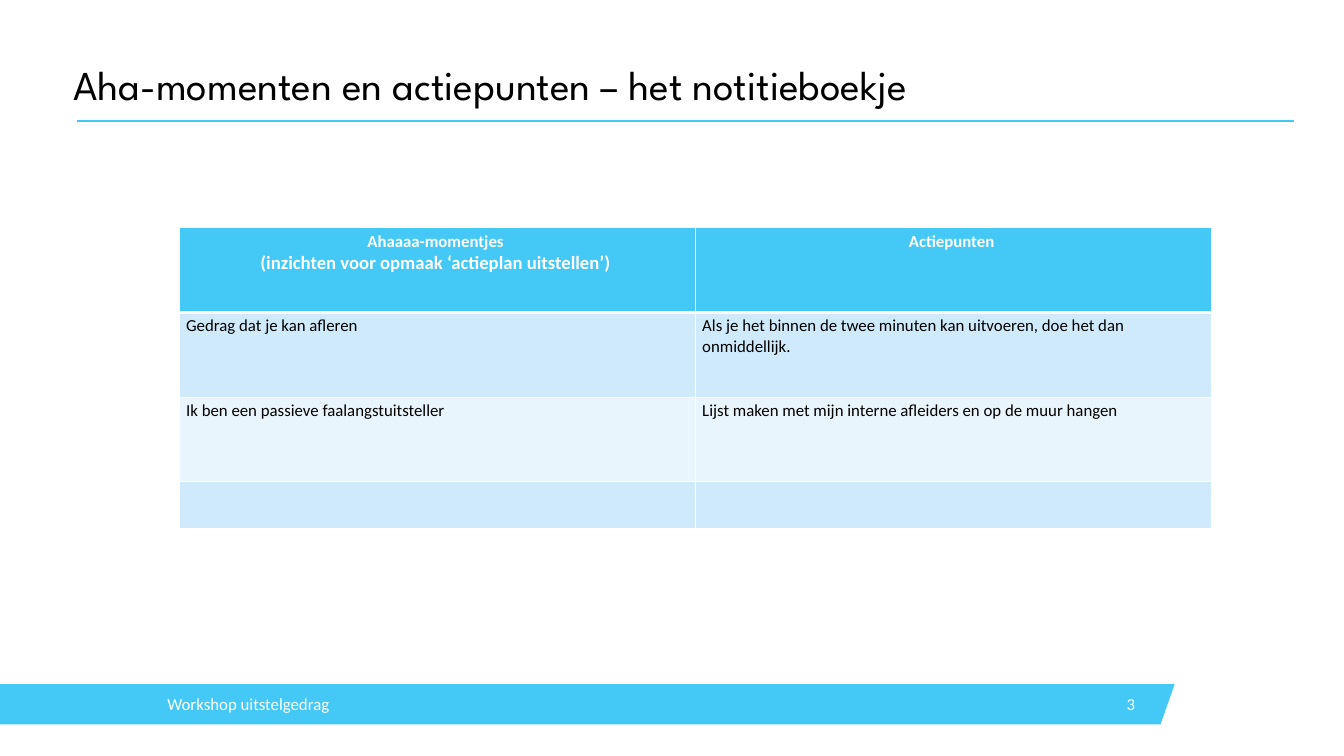
"""Build the workshop slide with the notebook table of insights and action points."""
import pptx
import pptx.dml.color
import pptx.enum.text
import pptx.oxml
import pptx.oxml.ns
import pptx.util
from lxml import etree

Inches = pptx.util.Inches
Pt = pptx.util.Pt
Align = pptx.enum.text.PP_ALIGN
Anchor = pptx.enum.text.MSO_ANCHOR


def colour(value):
    return pptx.dml.color.RGBColor.from_string(value)


class SlideWriter:
    accent = "44C8F5"
    white = "FFFFFF"
    black = "000000"
    bands = ("CFEBFB", "E9F5FD")
    body_font = "Calibri"
    title_font = "League Spartan"

    def __init__(self, page):
        self.page = page

    def add_span(self, para, text, size=18, tint=None, font=None, bold=False):
        span = para.add_run()
        span.text = text
        span.font.size = Pt(size)
        span.font.name = font or self.body_font
        span.font.bold = bold
        span.font.color.rgb = colour(tint or self.white)

    def text(self, left, top, width, height, text, align=Align.LEFT,
             margin=0, anchor=Anchor.MIDDLE, spacing=None, **style):
        box = self.page.shapes.add_textbox(
            Inches(left), Inches(top), Inches(width), Inches(height))
        frame = box.text_frame
        frame.word_wrap = True
        frame.vertical_anchor = anchor
        frame.margin_left = frame.margin_right = Inches(margin)
        frame.margin_top = frame.margin_bottom = Inches(margin / 2)
        para = frame.paragraphs[0]
        para.alignment = align
        para.line_spacing = spacing
        self.add_span(para, text, **style)

    def band(self, points):
        corners = [(Inches(x), Inches(y)) for x, y in points]
        builder = self.page.shapes.build_freeform(*corners[0])
        builder.add_line_segments(corners[1:], close=True)
        shape = builder.convert_to_shape()
        shape.shadow.inherit = False
        shape.fill.solid()
        shape.fill.fore_color.rgb = colour(self.accent)
        shape.line.fill.background()

    def rule(self, left, right, top):
        line = self.page.shapes.add_connector(
            pptx.enum.shapes.MSO_CONNECTOR.STRAIGHT,
            Inches(left), Inches(top), Inches(right), Inches(top))
        line.line.color.rgb = colour(self.accent)
        line.line.width = Pt(2.25)
        etree.SubElement(line._element.spPr, pptx.oxml.ns.qn("a:effectLst"))

    def border(self, cell, side, width):
        properties = cell._tc.get_or_add_tcPr()
        properties.append(pptx.oxml.parse_xml(
            f'<a:ln{side} {pptx.oxml.ns.nsdecls("a")} w="{Pt(width)}">'
            f'<a:solidFill><a:srgbClr val="{self.white}"/></a:solidFill></a:ln{side}>'))

    def cell(self, cell, row, lines):
        header = row == 0
        widths = {"L": 1, "R": 1, "T": 3 if row == 1 else 1, "B": 3 if header else 1}
        for side, width in widths.items():
            self.border(cell, side, width)
        cell.fill.solid()
        cell.fill.fore_color.rgb = colour(
            self.accent if header else self.bands[(row - 1) % 2])
        para = cell.text_frame.paragraphs[0]
        para.alignment = Align.CENTER if header else Align.LEFT
        for index, (text, size) in enumerate(lines):
            if index:
                para.add_line_break()
            self.add_span(para, text, size, self.white if header else self.black,
                          bold=header)

    def table(self, left, top, column_width, row_heights, rows):
        columns = len(rows[0])
        table = self.page.shapes.add_table(
            len(rows), columns, Inches(left), Inches(top),
            Inches(column_width * columns), Inches(sum(row_heights))).table
        table.first_row = True
        table.horz_banding = False
        for column in table.columns:
            column.width = Inches(column_width)
        for row, (height, contents) in enumerate(zip(row_heights, rows)):
            table.rows[row].height = Inches(height)
            for column, lines in enumerate(contents):
                self.cell(table.cell(row, column), row, lines)


def main():
    deck = pptx.Presentation()
    deck.slide_width = Inches(20)
    deck.slide_height = Inches(11.25)
    writer = SlideWriter(deck.slides.add_slide(deck.slide_layouts[6]))

    writer.band([(0, 10.18), (17.48, 10.18), (17.27, 10.78), (0, 10.78)])
    writer.rule(1.14, 19.25, 1.8)
    writer.text(15.9, 10.18, 1.09, 0.6, "3", align=Align.RIGHT, margin=0.1)
    writer.text(1.09, 0.97, 18.13, 0.69,
                "Aha-momenten en actiepunten – het notitieboekje",
                anchor=Anchor.TOP, spacing=0.9, size=44,
                tint=writer.black, font=writer.title_font)
    writer.text(2.49, 10.18, 6.75, 0.6, "Workshop uitstelgedrag")
    writer.table(2.67, 3.39, 7.68, [1.26, 1.26, 1.26, 0.69], [
        ([("Ahaaaa-momentjes ", 18),
          ("(inzichten voor opmaak ‘actieplan uitstellen’) ", 20)],
         [("Actiepunten ", 18)]),
        ([("Gedrag dat je kan afleren", 18)],
         [("Als je het binnen de twee minuten kan uitvoeren, "
           "doe het dan onmiddellijk.", 18)]),
        ([("Ik ben een passieve faalangstuitsteller", 18)],
         [("Lijst maken met mijn interne afleiders en op de muur hangen", 18)]),
        ([], []),
    ])
    deck.save("out.pptx")


if __name__ == "__main__":
    main()
